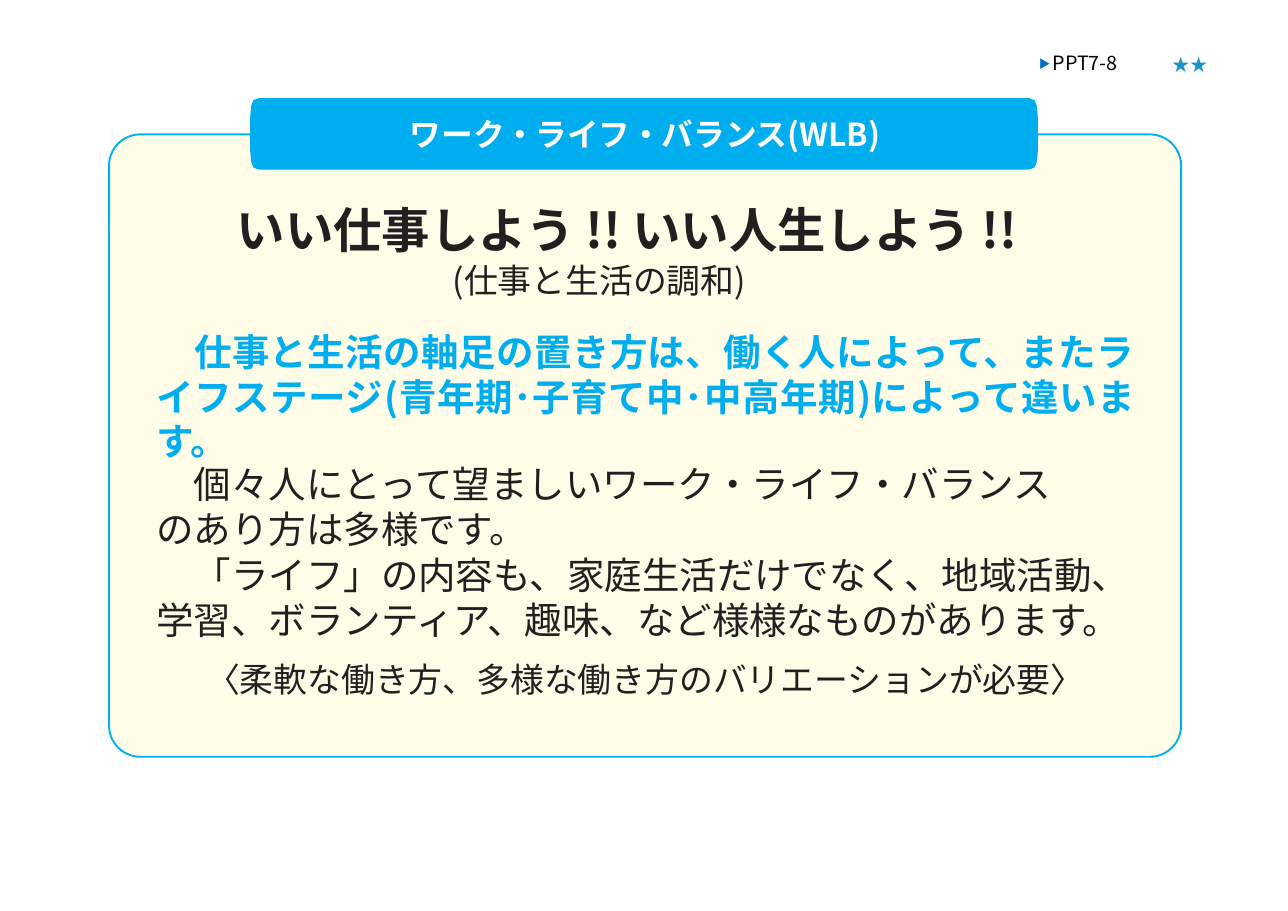
from dataclasses import dataclass

from lxml.etree import SubElement
from pptx import Presentation
from pptx.dml.color import RGBColor
from pptx.enum.lang import MSO_LANGUAGE_ID
from pptx.enum.shapes import MSO_SHAPE
from pptx.enum.text import MSO_ANCHOR, MSO_AUTO_SIZE, PP_ALIGN
from pptx.oxml.ns import qn
from pptx.util import Emu, Pt

EMU_PER_PX = 9144


@dataclass(frozen=True)
class Theme:
    font: str = "Noto Sans CJK JP"
    ink: str = "231F20"
    accent: str = "00AEEF"
    outline: str = "00B0F0"
    cream: str = "FFFDE8"
    white: str = "FFFFFF"
    black: str = "000000"
    marker: str = "0070C0"
    star: str = "1B93C9"
    slogan_size: float = 31.6
    body_size: float = 24.5
    note_size: float = 22.1
    heading_size: float = 20.7
    page_size: float = 12.9
    star_size: float = 11.3


THEME = Theme()


def px(length):
    return Emu(length * EMU_PER_PX)


def color(value):
    return RGBColor.from_string(value)


def add_text(paragraph, text, size=THEME.body_size, ink=THEME.ink, bold=False, baseline=0):
    run = paragraph.add_run()
    run.text = text
    font = run.font
    font.size = Pt(size)
    font.bold = bold
    font.color.rgb = color(ink)
    font.name = THEME.font
    font.language_id = MSO_LANGUAGE_ID.JAPANESE
    properties = run._r.get_or_add_rPr()
    SubElement(properties, qn("a:ea"), typeface=THEME.font)
    if baseline:
        properties.set("baseline", str(baseline * 1000))


def format_paragraph(paragraph, indent=0, before=0, leading=None, align=PP_ALIGN.LEFT):
    paragraph.alignment = align
    paragraph.space_before = Pt(before)
    if leading:
        paragraph.line_spacing = Pt(leading)
    properties = paragraph._p.get_or_add_pPr()
    properties.set("marL", str(px(indent)))
    properties.set("indent", "0")
    SubElement(properties, qn("a:buNone"))
    return paragraph


def set_frame(shape, left, top, width, height, inset_x=0, inset_top=2, inset_bottom=0, wrap=True):
    shape.left, shape.top, shape.width, shape.height = map(px, (left, top, width, height))
    frame = shape.text_frame
    frame.margin_left = frame.margin_right = px(inset_x)
    frame.margin_top, frame.margin_bottom = px(inset_top), px(inset_bottom)
    frame.word_wrap = wrap
    frame.auto_size = MSO_AUTO_SIZE.NONE
    frame.vertical_anchor = MSO_ANCHOR.TOP
    return frame


def add_panel(slide):
    panel = slide.shapes.add_shape(MSO_SHAPE.ROUNDED_RECTANGLE, px(99), px(122), px(973), px(565))
    panel.adjustments[0] = 0.05
    panel.shadow.inherit = False
    panel.fill.solid()
    panel.fill.fore_color.rgb = color(THEME.cream)
    panel.line.color.rgb = color(THEME.outline)
    panel.line.width = Pt(1.25)


def add_heading_tab(slide, left=227, top=89, right=942, bottom=154):
    corner = [(19, 0), (8, 0), (3, 2), (1, 7), (0, 18)]
    outline = [(left + x, top + y) for x, y in corner]
    outline += [(left + x, bottom - y) for x, y in reversed(corner)]
    outline += [(right - x, bottom - y) for x, y in corner]
    outline += [(right - x, top + y) for x, y in reversed(corner)]
    builder = slide.shapes.build_freeform(*outline[0], scale=EMU_PER_PX)
    builder.add_line_segments(outline[1:], close=True)
    tab = builder.convert_to_shape()
    tab.shadow.inherit = False
    tab.fill.solid()
    tab.fill.fore_color.rgb = color(THEME.accent)
    tab.line.fill.background()


def fill_heading(slide):
    heading = slide.shapes.title
    slide.shapes._spTree.append(heading._element)
    frame = set_frame(heading, 228, 102, 714, 37)
    line = format_paragraph(frame.paragraphs[0], indent=1, before=1.2, align=PP_ALIGN.CENTER)
    add_text(line, "ワーク・ライフ・バランス(WLB)", size=THEME.heading_size, ink=THEME.white, bold=True)


def fill_message(slide):
    message = slide.placeholders[1]
    slide.shapes._spTree.append(message._element)
    frame = set_frame(message, 141, 181, 889, 457, inset_top=1)

    slogan = format_paragraph(frame.paragraphs[0], indent=74, before=0.9)
    add_text(slogan, "いい仕事しよう !! いい人生しよう !!", size=THEME.slogan_size, bold=True)

    harmony = format_paragraph(frame.add_paragraph(), indent=270, before=0.7)
    add_text(harmony, "(仕事と生活の調和)", size=THEME.note_size)

    stance = format_paragraph(
        frame.add_paragraph(), indent=1, before=19.1, leading=29.2, align=PP_ALIGN.JUSTIFY
    )
    add_text(stance, "　")
    add_text(
        stance,
        "仕事と生活の軸足の置き方は、働く人によって、また"
        "ライフステージ(青年期･子育て中･中高年期)によって違います。",
        ink=THEME.accent,
        bold=True,
    )

    explanations = [
        ("　個々人にとって望ましいワーク・ライフ・バランス", 0, 28.1),
        ("のあり方は多様です。", 0, 29.2),
        (
            "　「ライフ」の内容も、家庭生活だけでなく、地域活動、"
            "学習、ボランティア、趣味、など様様なものがあります。",
            1,
            29.2,
        ),
    ]
    for text, before, leading in explanations:
        explanation = format_paragraph(
            frame.add_paragraph(), indent=1, before=before, leading=leading
        )
        add_text(explanation, text)

    conclusion = format_paragraph(frame.add_paragraph(), before=10.9, align=PP_ALIGN.CENTER)
    add_text(
        conclusion, "〈柔軟な働き方、多様な働き方のバリエーションが必要〉", size=THEME.note_size
    )


def add_page_mark(slide):
    page_mark = slide.shapes.add_textbox(0, 0, 0, 0)
    frame = set_frame(page_mark, 942, 44, 109, 23)
    line = format_paragraph(frame.paragraphs[0], indent=1, before=1.1)
    add_text(line, "▶ ", size=THEME.page_size, ink=THEME.marker, baseline=9)
    add_text(line, "PPT7-8", size=THEME.page_size, ink=THEME.black)


def add_stars(slide):
    stars = slide.shapes.add_textbox(0, 0, 0, 0)
    frame = set_frame(stars, 1039, 44, 68, 29, inset_x=10, inset_top=5, inset_bottom=5, wrap=False)
    line = format_paragraph(frame.paragraphs[0])
    add_text(line, "　★★", size=THEME.star_size, ink=THEME.star)


def main():
    presentation = Presentation()
    presentation.slide_width, presentation.slide_height = px(1169), px(827)
    slide = presentation.slides.add_slide(presentation.slide_layouts[1])
    add_panel(slide)
    add_heading_tab(slide)
    fill_heading(slide)
    fill_message(slide)
    add_page_mark(slide)
    add_stars(slide)
    presentation.save("out.pptx")


if __name__ == "__main__":
    main()
